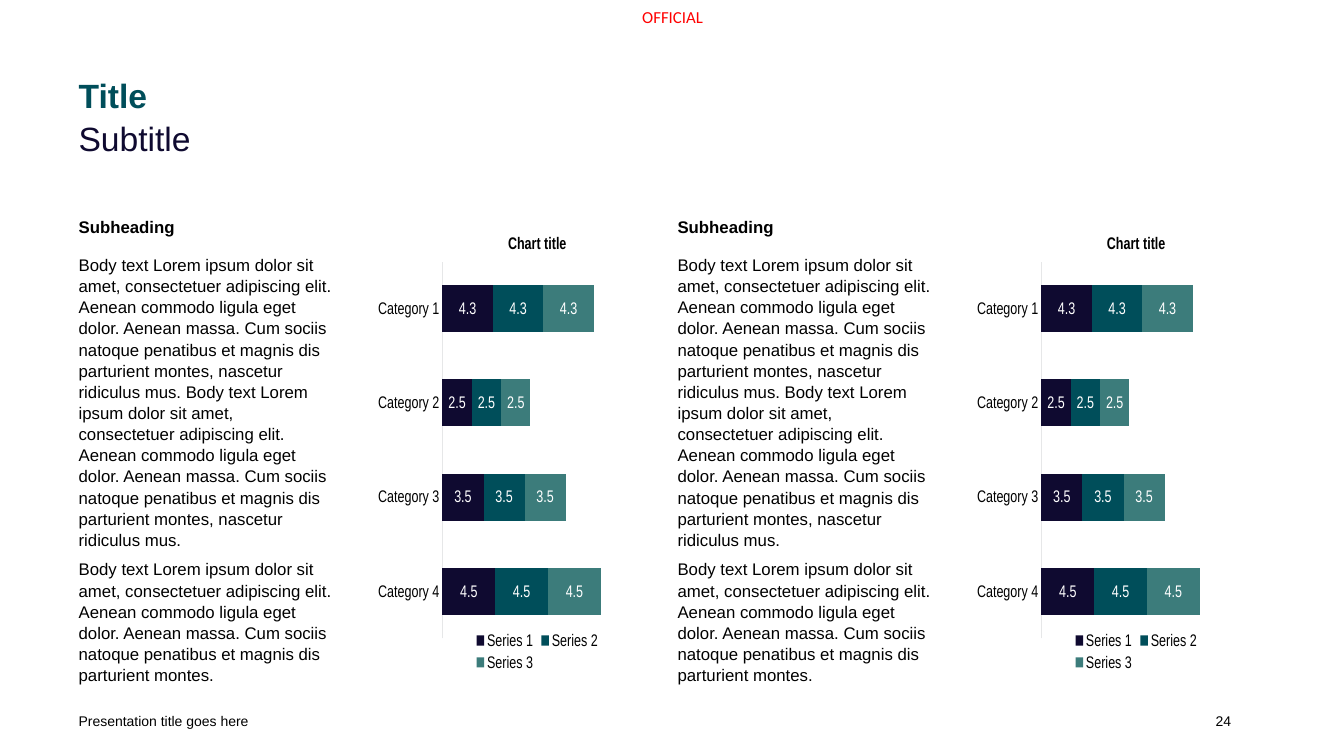
from lxml import etree
from pptx import Presentation
from pptx.chart.data import CategoryChartData
from pptx.dml.color import RGBColor
from pptx.enum.chart import XL_CHART_TYPE, XL_LEGEND_POSITION, XL_TICK_MARK
from pptx.enum.text import MSO_ANCHOR, PP_ALIGN
from pptx.oxml.ns import qn
from pptx.util import Inches, Pt

BLACK = RGBColor(0x00, 0x00, 0x00)
WHITE = RGBColor(0xFF, 0xFF, 0xFF)
RED = RGBColor(0xFF, 0x00, 0x00)
NAVY = RGBColor(0x0F, 0x0A, 0x30)
TEAL = RGBColor(0x00, 0x4E, 0x5A)
SEA = RGBColor(0x3C, 0x7C, 0x7B)
GREY = RGBColor(0xE6, 0xE7, 0xE8)

BAR_STACKED = XL_CHART_TYPE.BAR_STACKED
LEGEND_BOTTOM = XL_LEGEND_POSITION.BOTTOM
NO_TICK = XL_TICK_MARK.NONE
TOP, MIDDLE = MSO_ANCHOR.TOP, MSO_ANCHOR.MIDDLE
LEFT, CENTER, RIGHT = PP_ALIGN.LEFT, PP_ALIGN.CENTER, PP_ALIGN.RIGHT

# Content
LOREM = "Body text Lorem ipsum dolor sit amet, consectetuer adipiscing elit. "
LOREM += "Aenean commodo ligula eget dolor. Aenean massa. Cum sociis natoque "
LOREM += "penatibus et magnis dis parturient montes"
FULL = LOREM + ", nascetur ridiculus mus."
BODY = [FULL + " " + FULL, LOREM + "."]
CATEGORIES = ["Category 1", "Category 2", "Category 3", "Category 4"]
VALUES = [4.3, 2.5, 3.5, 4.5]
SERIES = {"Series 1": NAVY, "Series 2": TEAL, "Series 3": SEA}
PLOT = {"x": 0, "y": 0.1, "w": 0.99, "h": 0.82}

# Column grid
MARGIN, COL_W, COL_STEP = 0.78, 2.52, 2.97
COL_TOP, COL_H = 2.14, 4.56


class Deck:
    font = "Arial"
    size = 12
    spacing = 1.05

    def __init__(self):
        self.prs = Presentation()
        self.prs.slide_width = Inches(13.33)
        self.prs.slide_height = Inches(7.5)
        self.s = self.prs.slides.add_slide(self.prs.slide_layouts[6])

    def style(self, font, color=BLACK, size=None, bold=False, name=None):
        font.name = name or self.font
        font.size = Pt(size or self.size)
        font.bold = bold
        font.color.rgb = color

    def box(self, x, y, w, h, anchor=TOP, wrap=True):
        tf = self.s.shapes.add_textbox(Inches(x), Inches(y), Inches(w), Inches(h)).text_frame
        tf.margin_left = tf.margin_right = tf.margin_top = tf.margin_bottom = 0
        tf.word_wrap = wrap
        tf.vertical_anchor = anchor
        return tf

    def add_text(self, p, text, align=LEFT, spacing=1.0, after=0, **look):
        p.alignment = align
        p.line_spacing = spacing
        p.space_after = Pt(after)
        r = p.add_run()
        r.text = text
        self.style(r.font, **look)

    def line(self, text, x, y, w, h, anchor=TOP, wrap=True, **look):
        self.add_text(self.box(x, y, w, h, anchor, wrap).paragraphs[0], text, **look)

    def article(self, x, heading, paragraphs):
        tf = self.box(x, COL_TOP, COL_W, COL_H)
        self.add_text(tf.paragraphs[0], heading, spacing=self.spacing, after=12, bold=True)
        for text in paragraphs:
            self.add_text(tf.add_paragraph(), text, spacing=self.spacing, after=6)

    def chart(self, x, title):
        data = CategoryChartData(number_format="#,##0.0")
        data.categories = CATEGORIES
        for name in SERIES:
            data.add_series(name, VALUES)
        chart = self.s.shapes.add_chart(
            BAR_STACKED, Inches(x), Inches(COL_TOP), Inches(COL_W), Inches(COL_H), data).chart
        self.style(chart.font)

        # Title and legend
        chart.has_title = True
        self.add_text(chart.chart_title.text_frame.paragraphs[0], title, CENTER, bold=True)
        chart.has_legend = True
        chart.legend.position = LEGEND_BOTTOM
        chart.legend.include_in_layout = False
        self.style(chart.legend.font)

        # Axes
        axis = chart.category_axis
        axis.reverse_order = True
        axis.major_tick_mark = axis.minor_tick_mark = NO_TICK
        axis.format.line.color.rgb = GREY
        axis.format.line.width = Pt(0.75)
        self.style(axis.tick_labels.font)
        chart.value_axis.has_major_gridlines = False
        chart.value_axis.visible = False

        # Bars
        plot = chart.plots[0]
        plot.gap_width = plot.overlap = 100
        plot.vary_by_categories = False
        for series, color in zip(plot.series, SERIES.values()):
            series.format.fill.solid()
            series.format.fill.fore_color.rgb = color
            labels = series.data_labels
            labels.show_value = True
            labels.number_format = "#,##0.0"
            labels.number_format_is_linked = False
            self.style(labels.font, WHITE)
        self.place_plot(chart)

    def place_plot(self, chart):
        area = chart.plots[0]._element.getparent()
        for old in area.findall(qn("c:layout")):
            area.remove(old)
        layout = etree.Element(qn("c:layout"))
        manual = etree.SubElement(layout, qn("c:manualLayout"))
        settings = {"layoutTarget": "inner", "xMode": "edge", "yMode": "edge", **PLOT}
        for tag, value in settings.items():
            etree.SubElement(manual, qn("c:" + tag)).set("val", str(value))
        area.insert(0, layout)


def main():
    deck = Deck()

    # Marking and headings
    deck.line("OFFICIAL", 6.37, 0.07, 0.64, 0.2, wrap=False, color=RED, name="Calibri")
    deck.line("Title", MARGIN, 0.79, 11.45, 0.35, spacing=0.9, color=TEAL, size=24, bold=True)
    deck.line("Subtitle", MARGIN, 1.15, 11.43, 0.35, spacing=deck.spacing, color=NAVY, size=24)

    # Two pairs of text and chart
    for pair in range(2):
        x = MARGIN + 2 * pair * COL_STEP
        deck.article(x, "Subheading", BODY)
        deck.chart(x + COL_STEP, "Chart title")

    # Footer
    deck.line("Presentation title goes here", MARGIN, 6.95, 4.5, 0.4, MIDDLE, size=10)
    deck.line("24", 9.21, 6.95, 3, 0.4, MIDDLE, align=RIGHT, size=10)

    deck.prs.save("out.pptx")


if __name__ == "__main__":
    main()
